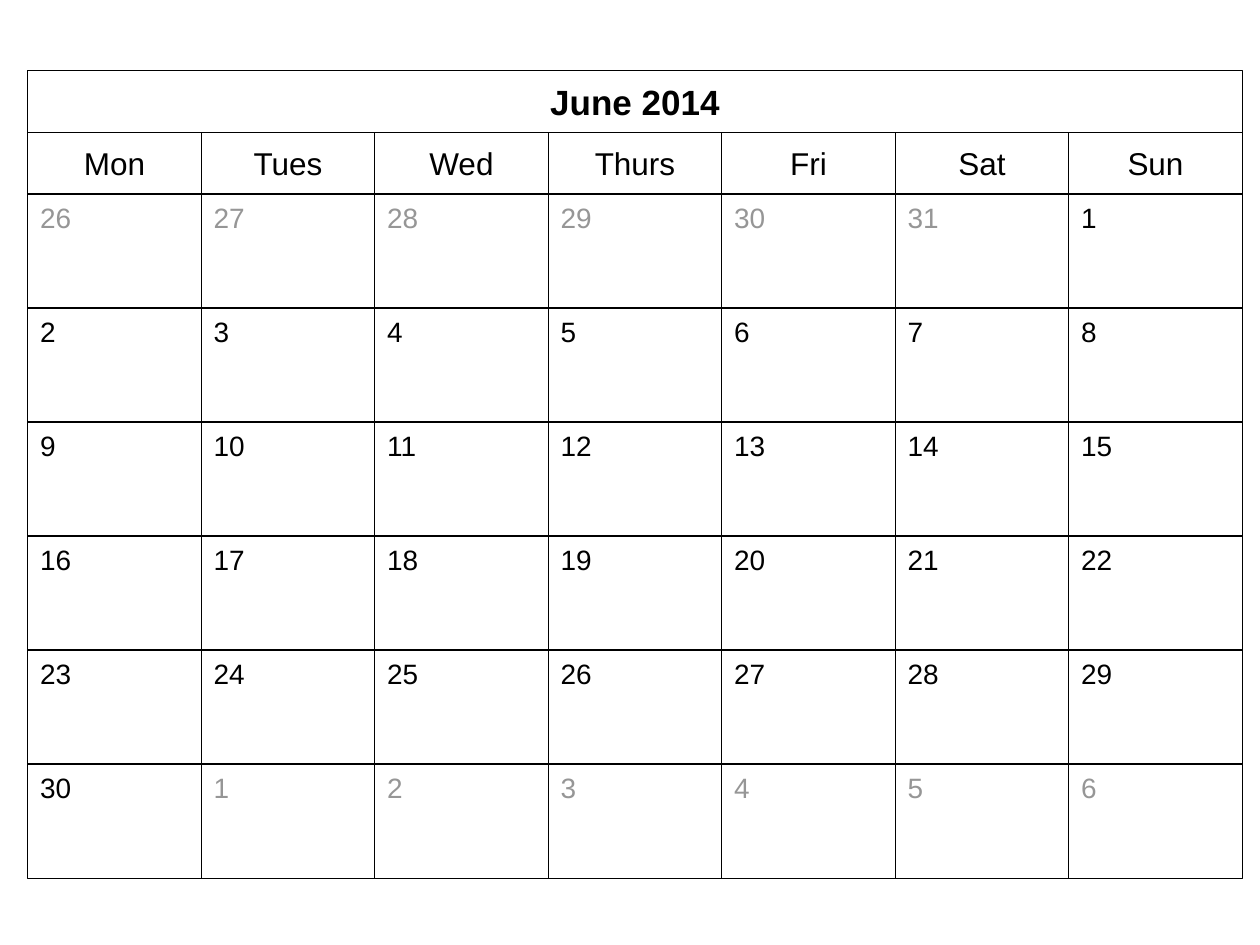
import pptx
import pptx.dml.color
import pptx.enum.shapes
import pptx.enum.text
import pptx.util

Inches = pptx.util.Inches
Pt = pptx.util.Pt
ALIGN = pptx.enum.text.PP_ALIGN
ANCHOR = pptx.enum.text.MSO_ANCHOR

COLORS = {"paper": "FFFFFF", "ink": "000000", "muted": "969696"}
FONT = "Arial"

LEFT, TOP, WIDTH = 0.22, 0.56, 9.64
HEADER_HEIGHT = 0.49
DAYS_TOP = TOP + 2 * HEADER_HEIGHT
DAYS_HEIGHT = 5.43

WEEKDAYS = ["Mon", "Tues", "Wed", "Thurs", "Fri", "Sat", "Sun"]
WEEKS = 6
COLUMN_WIDTH = WIDTH / len(WEEKDAYS)
ROW_HEIGHT = DAYS_HEIGHT / WEEKS
DAYS_BEFORE = range(26, 32)
DAYS_IN_MONTH = range(1, 31)
DAYS_AFTER = range(1, 7)


def color(name):
    return pptx.dml.color.RGBColor.from_string(COLORS[name])


def outline(shape):
    shape.line.color.rgb = color("ink")
    shape.line.width = Pt(0.75)


def write(shape, text, size, align, anchor, inset, ink="ink", bold=False):
    frame = shape.text_frame
    frame.word_wrap = True
    frame.auto_size = pptx.enum.text.MSO_AUTO_SIZE.NONE
    frame.vertical_anchor = anchor
    frame.margin_left = frame.margin_right = Inches(0.1)
    frame.margin_top = frame.margin_bottom = Inches(inset)
    paragraph = frame.paragraphs[0]
    paragraph.alignment = align
    run = paragraph.add_run()
    run.text = text
    run.font.name = FONT
    run.font.size = Pt(size)
    run.font.bold = bold
    run.font.color.rgb = color(ink)


def format_header(shape, text, size, bold=False):
    shape.fill.solid()
    shape.fill.fore_color.rgb = color("paper")
    outline(shape)
    write(shape, text, size, ALIGN.CENTER, ANCHOR.MIDDLE, 0.02, bold=bold)


def add_box(slide, column, top, height):
    """Add a rectangle one calendar column wide."""
    shape = slide.shapes.add_shape(
        pptx.enum.shapes.MSO_SHAPE.RECTANGLE,
        Inches(LEFT + column * COLUMN_WIDTH), Inches(top),
        Inches(COLUMN_WIDTH), Inches(height))
    shape.shadow.inherit = False
    return shape


def place_title(slide, text):
    title = slide.shapes.title
    title.left, title.top = Inches(LEFT), Inches(TOP)
    title.width, title.height = Inches(WIDTH), Inches(HEADER_HEIGHT)
    format_header(title, text, 20, bold=True)


def add_weekdays(slide):
    for column, name in enumerate(WEEKDAYS):
        box = add_box(slide, column, TOP + HEADER_HEIGHT, HEADER_HEIGHT)
        format_header(box, name, 18)


def add_days(slide):
    days = [(day, "muted") for day in DAYS_BEFORE]
    days += [(day, "ink") for day in DAYS_IN_MONTH]
    days += [(day, "muted") for day in DAYS_AFTER]
    for index, (day, ink) in enumerate(days):
        week, column = divmod(index, len(WEEKDAYS))
        box = add_box(slide, column, DAYS_TOP + week * ROW_HEIGHT, ROW_HEIGHT)
        box.fill.background()
        outline(box)
        write(box, str(day), 16, ALIGN.LEFT, ANCHOR.TOP, 0.05, ink)


def main():
    presentation = pptx.Presentation()
    presentation.slide_width = Inches(10)
    presentation.slide_height = Inches(7.5)
    title_only = presentation.slide_layouts[5]
    slide = presentation.slides.add_slide(title_only)
    place_title(slide, "June 2014")
    add_weekdays(slide)
    add_days(slide)
    presentation.save("out.pptx")


if __name__ == "__main__":
    main()
